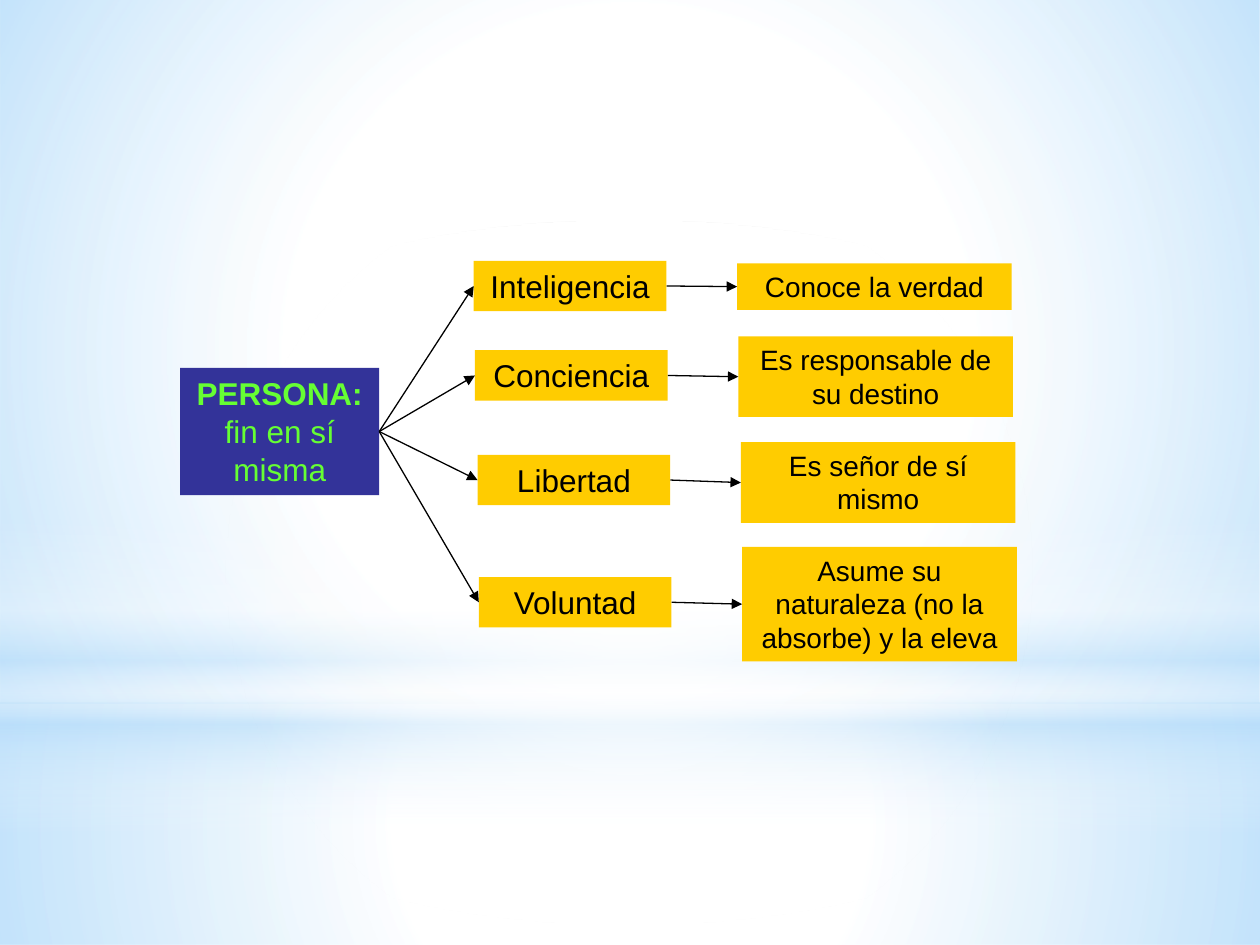
from dataclasses import dataclass

from lxml import etree
from pptx import Presentation
from pptx.dml.color import RGBColor
from pptx.enum.shapes import MSO_CONNECTOR as Connector, MSO_SHAPE as Shape
from pptx.enum.text import MSO_ANCHOR as Anchor, MSO_AUTO_SIZE as AutoSize, PP_ALIGN as Align
from pptx.oxml.ns import qn
from pptx.util import Inches, Pt


@dataclass(frozen=True)
class Theme:
    font: str = "Arial"
    white: str = "FFFFFF"
    sky: str = "B4DCFA"
    navy: str = "333399"
    green: str = "66FF33"
    gold: str = "FFCC00"
    black: str = "000000"
    title_size: int = 18
    detail_size: int = 16
    line_width: float = 0.75


THEME = Theme()
TOP, LEFT, BOTTOM, RIGHT = range(4)

BRANCHES = [
    ("Inteligencia", "Conoce la verdad", (3.76, 2.07, 1.53, 0.4), (5.85, 2.09, 2.18, 0.37)),
    ("Conciencia", "Es responsable de su destino", (3.77, 2.78, 1.53, 0.4), (5.86, 2.67, 2.18, 0.64)),
    ("Libertad", "Es señor de sí mismo", (3.79, 3.61, 1.53, 0.4), (5.88, 3.51, 2.18, 0.64)),
    ("Voluntad", "Asume su naturaleza (no la absorbe) y la eleva", (3.8, 4.58, 1.53, 0.4), (5.89, 4.34, 2.18, 0.91)),
]


def add_plain_shape(page, kind, box):
    shape = page.shapes.add_shape(kind, *map(Inches, box))
    shape.shadow.inherit = False
    shape.line.fill.background()
    return shape


def add_glow(page, kind, box, stops, radial=True):
    shape = add_plain_shape(page, kind, box)
    shape.fill.background()
    gradient = etree.Element(qn("a:gradFill"), rotWithShape="1")
    stop_list = etree.SubElement(gradient, qn("a:gsLst"))
    for position, color, opacity in stops:
        stop = etree.SubElement(stop_list, qn("a:gs"), pos=str(position * 1000))
        tint = etree.SubElement(stop, qn("a:srgbClr"), val=color)
        etree.SubElement(tint, qn("a:alpha"), val=str(opacity * 1000))
    if radial:
        circle = etree.SubElement(gradient, qn("a:path"), path="circle")
        etree.SubElement(circle, qn("a:fillToRect"), l="50000", t="50000", r="50000", b="50000")
    else:
        etree.SubElement(gradient, qn("a:lin"), ang="5400000", scaled="0")
    properties = shape._element.spPr
    properties.replace(properties.find(qn("a:noFill")), gradient)


def add_backdrop(page, box):
    left, top, width, height = box
    horizon = 5.58
    white, sky = THEME.white, THEME.sky
    page.background.fill.solid()
    page.background.fill.fore_color.rgb = RGBColor.from_string(white)
    add_glow(page, Shape.RECTANGLE, (left, top + horizon, width, height - horizon),
             [(0, white, 91), (37, white, 76), (100, sky, 79)])
    add_glow(page, Shape.RECTANGLE, (left, top, width, horizon),
             [(0, white, 89), (48, white, 62), (100, sky, 79)])
    add_glow(page, Shape.RECTANGLE, (left, top + 4.12, width, 2.5),
             [(0, white, 0), (29, white, 30), (45, sky, 40),
              (55, white, 26), (65, sky, 60), (100, white, 0)], radial=False)
    add_glow(page, Shape.OVAL, (left, top + 1.75, width, horizon),
             [(0, white, 100), (56, white, 0)])


def add_label(page, box, spans, size, fill, color):
    shape = add_plain_shape(page, Shape.RECTANGLE, box)
    shape.fill.solid()
    shape.fill.fore_color.rgb = RGBColor.from_string(fill)
    frame = shape.text_frame
    frame.word_wrap = True
    frame.auto_size = AutoSize.SHAPE_TO_FIT_TEXT
    frame.vertical_anchor = Anchor.TOP
    para = frame.paragraphs[0]
    para.alignment = Align.CENTER
    para.font.name = THEME.font
    para.font.size = Pt(size)
    para.font.color.rgb = RGBColor.from_string(color)
    for text, bold in spans:
        span = para.add_run()
        span.text = text
        span.font.bold = bold
    return shape


def add_arrow(page, source, target):
    arrow = page.shapes.add_connector(Connector.STRAIGHT, 0, 0, 0, 0)
    arrow.begin_connect(source, RIGHT)
    arrow.end_connect(target, LEFT)
    arrow.line.width = Pt(THEME.line_width)
    arrow.line.color.rgb = RGBColor.from_string(THEME.black)
    etree.SubElement(arrow.line._get_or_add_ln(), qn("a:tailEnd"), type="triangle")
    etree.SubElement(arrow._element.spPr, qn("a:effectLst"))


def add_branch(page, root, name, detail, name_box, detail_box):
    faculty = add_label(page, name_box, [(name, False)], THEME.title_size, THEME.gold, THEME.black)
    add_arrow(page, root, faculty)
    meaning = add_label(page, detail_box, [(detail, False)], THEME.detail_size, THEME.gold, THEME.black)
    add_arrow(page, faculty, meaning)


def main():
    deck = Presentation()
    deck.slide_width, deck.slide_height = Inches(10), Inches(7.5)
    page = deck.slides.add_slide(deck.slide_layouts[6])
    add_backdrop(page, (0, 0, 10, 7.5))
    person = add_label(page, (1.43, 2.92, 1.58, 1.01),
                       [("PERSONA: ", True), ("fin en sí misma", False)],
                       THEME.title_size, THEME.navy, THEME.green)
    for branch in BRANCHES:
        add_branch(page, person, *branch)
    deck.save("out.pptx")


if __name__ == "__main__":
    main()
